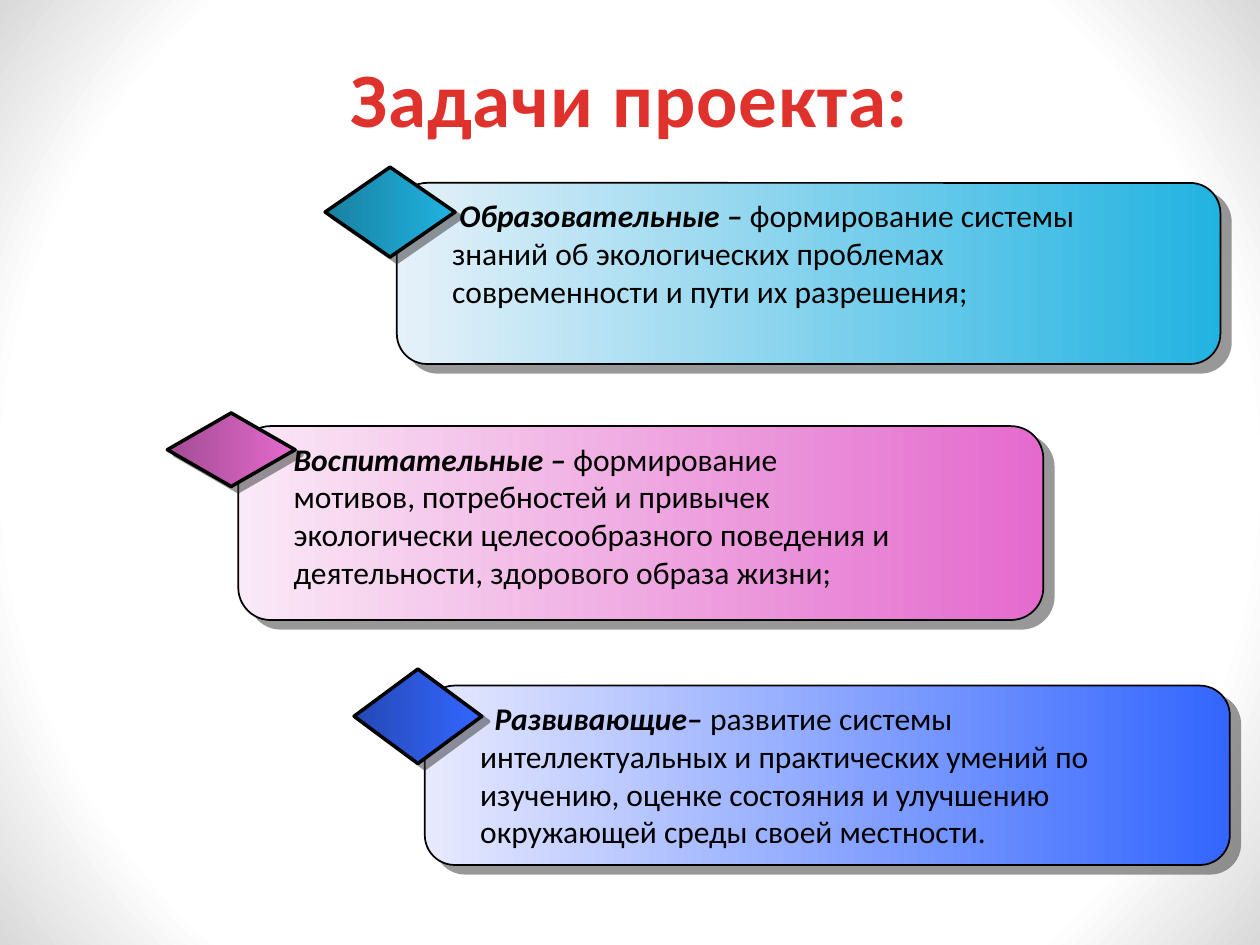
from lxml.etree import SubElement
from pptx import Presentation
from pptx.dml.color import RGBColor as RGB
from pptx.enum.shapes import MSO_SHAPE as SHAPE
from pptx.enum.text import MSO_ANCHOR as ANCHOR, MSO_AUTO_SIZE as FIT, PP_ALIGN as ALIGN
from pptx.oxml.ns import qn
from pptx.util import Pt

BLACK = RGB(0, 0, 0)
WHITE = RGB(255, 255, 255)
GREY = RGB(0xD9, 0xD9, 0xD9)
RED = RGB(0xE0, 0x32, 0x2D)
PINK = RGB(0xE4, 0x6A, 0xCD)
PALE_PINK = RGB(0xFA, 0xE9, 0xF6)
DARK_PINK = RGB(0xA3, 0x4C, 0x93)
BLUE = RGB(0x33, 0x66, 0xFF)
PALE_BLUE = RGB(0xE7, 0xE9, 0xFF)
DARK_BLUE = RGB(0x24, 0x49, 0xB6)
CYAN = RGB(0x21, 0xB3, 0xE1)
PALE_CYAN = RGB(0xE6, 0xF1, 0xF9)
DARK_CYAN = RGB(0x18, 0x80, 0xA1)

TITLE = "Задачи проекта:"
GOALS = [
    dict(head="Воспитательные – ",
         body="формирование мотивов, потребностей и привычек экологически "
              "целесообразного поведения и деятельности, здорового образа жизни;",
         box=(136.2, 243.5, 460, 110.8), gem=(95.6, 236, 73, 42),
         wide=363.6, indent=0, tones=(PALE_PINK, DARK_PINK, PINK)),
    dict(head="Развивающие– ",
         body="развитие системы интеллектуальных и практических умений по изучению, "
              "оценке состояния и улучшению окружающей среды своей местности.",
         box=(242.8, 391.8, 460, 102.5), gem=(202.3, 382.3, 73, 54),
         wide=363.6, indent=8.2, tones=(PALE_BLUE, DARK_BLUE, BLUE)),
    dict(head="Образовательные – ",
         body="формирование системы знаний об экологических проблемах "
              "современности и пути их разрешения;",
         box=(226.8, 104.5, 470.6, 103.5), gem=(185.8, 95.5, 74.2, 51.4),
         wide=371.5, indent=4.1, tones=(PALE_CYAN, DARK_CYAN, CYAN)),
]


def blend(shape, first, last, start=0):
    fill = shape.fill
    fill.gradient()
    for stop, tone, place in zip(fill.gradient_stops, (first, last), (start, 1)):
        stop.color.rgb = tone
        stop.position = place
    fill.gradient_angle = 0


def add_shape(slide, kind, area):
    shape = slide.shapes.add_shape(kind, *map(Pt, area))
    shape.shadow.inherit = False
    return shape


def add_back(slide, size):
    back = add_shape(slide, SHAPE.RECTANGLE, (0, 0, *size))
    blend(back, WHITE, GREY, 0.79)
    back.line.fill.background()
    grad = back._element.spPr.find(qn("a:gradFill"))
    grad.remove(grad.find(qn("a:lin")))
    ring = SubElement(grad, qn("a:path"), path="circle")
    SubElement(ring, qn("a:fillToRect"), dict.fromkeys("ltrb", "50000"))


def add_block(slide, kind, area, tones, line, dist, turn):
    shape = add_shape(slide, kind, area)
    blend(shape, *tones)
    shape.line.color.rgb = BLACK
    shape.line.width = Pt(line)
    effects = shape._element.spPr.find(qn("a:effectLst"))
    shade = SubElement(effects, qn("a:outerShdw"), blurRad="0", dist=str(Pt(dist)),
                       dir=str(turn * 60000), algn="ctr", rotWithShape="0")
    tone = SubElement(shade, qn("a:srgbClr"), val="333333")
    SubElement(tone, qn("a:alpha"), val="50000")


def add_text(slide, area, runs, size=18, color=BLACK, align=ALIGN.LEFT,
             anchor=ANCHOR.TOP, fit=FIT.NONE, indent=0, gap=0):
    frame = slide.shapes.add_textbox(*map(Pt, area)).text_frame
    frame.word_wrap = True
    frame.auto_size = fit
    frame.vertical_anchor = anchor
    para = frame.paragraphs[0]
    para.alignment = align
    if indent:
        para._p.get_or_add_pPr().set("indent", str(Pt(indent)))
    for text, bold, slant in runs:
        run = para.add_run()
        run.text = text
        font = run.font
        font.name = "Calibri"
        font.size = Pt(size)
        font.bold = bold
        font.italic = slant
        font.color.rgb = color
        if gap:
            run._r.get_or_add_rPr().set("spc", str(int(gap * 100)))


def add_goal(slide, goal):
    pale, dark, full = goal["tones"]
    left, top, _, high = goal["box"]
    add_block(slide, SHAPE.ROUNDED_RECTANGLE, goal["box"], (pale, full), 1, 7.8, 40)
    add_block(slide, SHAPE.DIAMOND, goal["gem"], (dark, full), 2, 5, 37)
    add_text(slide, (left + 24.5, top + 4.1, goal["wide"], high),
             [(goal["head"], True, True), (goal["body"], False, False)],
             fit=FIT.SHAPE_TO_FIT_TEXT, indent=goal["indent"])


def main():
    size = 720, 540
    deck = Presentation()
    deck.slide_width, deck.slide_height = map(Pt, size)
    slide = deck.slides.add_slide(deck.slide_layouts[6])
    add_back(slide, size)
    add_text(slide, (36, 14.4, 648, 81.4), [(TITLE, True, False)], size=44,
             color=RED, align=ALIGN.CENTER, anchor=ANCHOR.MIDDLE, gap=0.5)
    for goal in GOALS:
        add_goal(slide, goal)
    deck.save("out.pptx")


if __name__ == "__main__":
    main()
